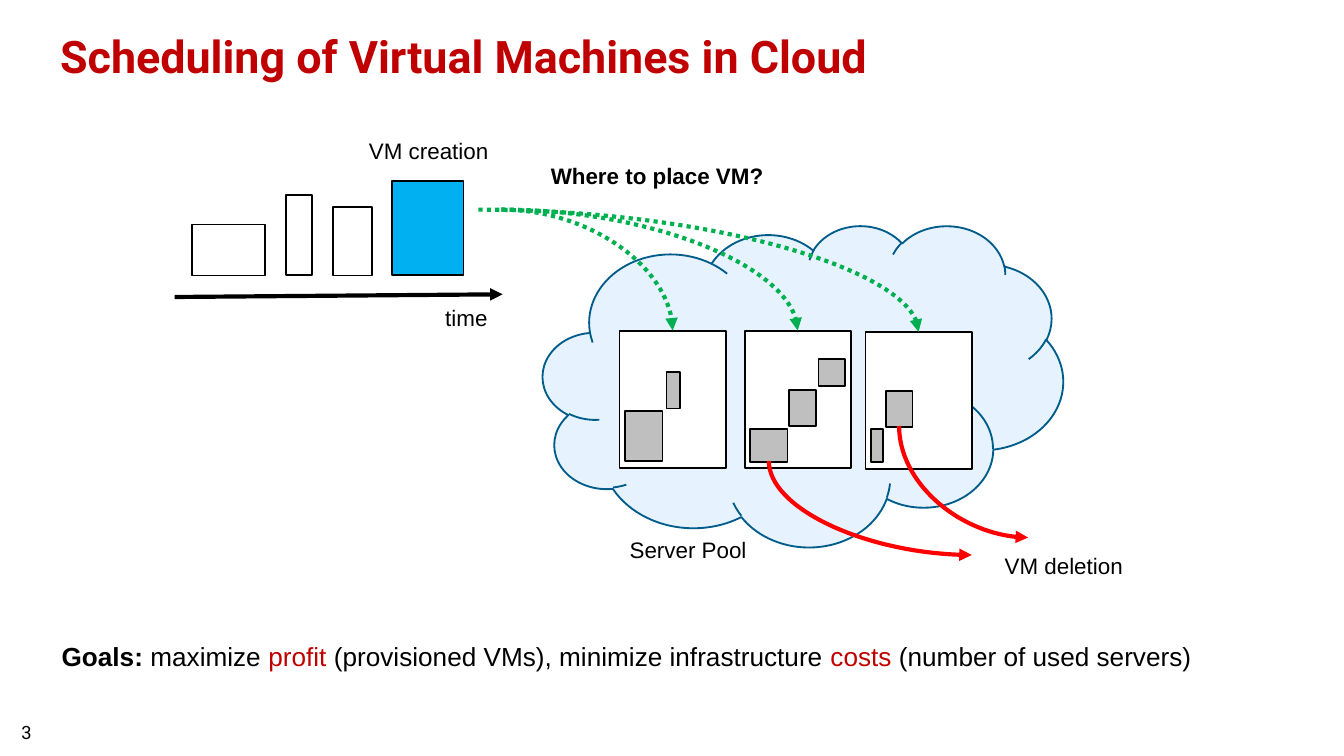
from lxml import etree
from pptx import Presentation, util as u
from pptx.dml.color import RGBColor
from pptx.enum import dml, shapes, text
from pptx.oxml import ns

# Grid: columns and rows of a tenth of an inch
COLS, ROWS = 100, 56.25
BLACK, WHITE, GREY = "000000", "FFFFFF", "BFBFBF"
RED, GREEN, DARK = "FF0000", "00B050", "C00000"


def grid(*cells):
    return [u.Inches(cell / 10) for cell in cells]


def paint(target, color):
    target.solid()
    target.fore_color.rgb = RGBColor.from_string(color)


def block(slide, area, fill, line=BLACK, kind=shapes.MSO_SHAPE.RECTANGLE):
    shape = slide.shapes.add_shape(kind, *grid(*area))
    shape.shadow.inherit = False
    paint(shape.fill, fill)
    paint(shape.line.fill, line)
    shape.line.width = u.Pt(1)


def label(slide, area, parts, size=12, font="Arial", align="LEFT",
          wrap=False, inset=True):
    """Write one line; each part is (words, color, bold)."""
    box = slide.shapes.add_textbox(*grid(*area))
    frame = box.text_frame
    frame.word_wrap = wrap
    frame.vertical_anchor = text.MSO_ANCHOR.MIDDLE
    if not inset:
        frame.margin_left = frame.margin_right = 0
        frame.margin_top = frame.margin_bottom = 0
    para = frame.paragraphs[0]
    para.alignment = getattr(text.PP_ALIGN, align)
    for words, color, bold in parts:
        run = para.add_run()
        run.text = words
        run.font.name, run.font.size = font, u.Pt(size)
        run.font.bold = bold
        paint(run.font.fill, color)


def arrow(slide, start, end, color, kind=shapes.MSO_CONNECTOR.STRAIGHT):
    link = slide.shapes.add_connector(kind, *grid(*start, *end))
    paint(link.line.fill, color)
    link.line.width = u.Pt(2.25)
    props = link._element.spPr
    edge = props.find(ns.qn("a:ln"))
    etree.SubElement(edge, ns.qn("a:tailEnd"), type="triangle")
    etree.SubElement(props, ns.qn("a:effectLst"))
    return link


def curve(slide, start, end, color, drop=False):
    """Quarter bend: leaves sideways, or downwards when drop is set."""
    (x1, y1), (x2, y2) = start, end
    if drop:  # the box before its quarter turn, mirrored
        midx, midy = (x1 + x2) / 2, (y1 + y2) / 2
        halfw, halfh = (y2 - y1) / 2, (x2 - x1) / 2
        start = midx + halfw, midy - halfh
        end = midx - halfw, midy + halfh
    link = arrow(slide, start, end, color, shapes.MSO_CONNECTOR.CURVE)
    props = link._element.spPr
    props.find(ns.qn("a:prstGeom")).set("prst", "curvedConnector2")
    if drop:
        props.find(ns.qn("a:xfrm")).set("rot", "16200000")
    return link


def queue(slide):
    # Requests stand on a common base above the time axis
    base = 20.5
    for left, wide, high, fill in [(14.3, 5.4, 3.8, WHITE),
                                   (21.3, 1.9, 6, WHITE),
                                   (24.8, 2.9, 5.1, WHITE),
                                   (29.2, 5.3, 7, "00B0F0")]:
        block(slide, (left, base - high, wide, high), fill)
    arrow(slide, (13, 22.1), (37.4, 21.9), BLACK)


def pool(slide):
    # Each server holds machines, placed from its own corner
    servers = [
        (46.1, 24.6, [(.4, 6, 2.8, 3.7), (3.5, 3.1, 1, 2.7)]),
        (55.4, 24.6, [(.4, 7.3, 2.8, 2.5), (3.3, 4.4, 2, 2.7),
                      (5.5, 2.1, 2, 2)]),
        (64.4, 24.7, [(.4, 7.2, .9, 2.5), (1.5, 4.4, 2, 2.7)]),
    ]
    for left, top, vms in servers:
        block(slide, (left, top, 7.9, 10.2), WHITE)
        for x, y, wide, high in vms:
            block(slide, (left + x, top + y, wide, high), GREY)
    # Placement choices
    for begin, (left, top, _) in zip((37.3, 37.3, 35.6), servers):
        link = curve(slide, (begin, 15.6), (left + 3.95, top), GREEN)
        link.line.dash_style = dml.MSO_LINE.ROUND_DOT
    # Deletions
    curve(slide, (57.2, 34.3), (72.3, 41.3), RED, True)
    curve(slide, (66.9, 31.7), (76.5, 40), RED, True)


def main():
    deck = Presentation()
    deck.slide_width, deck.slide_height = grid(COLS, ROWS)
    slide = deck.slides.add_slide(deck.slide_layouts[6])

    # Page number and title
    label(slide, (1.6, 53.6, 5.9, 1.7), [("3", BLACK, False)],
          9.8, "Roboto", wrap=True, inset=False)
    label(slide, (3.5, 1.4, 95.3, 5.5),
          [("Scheduling of Virtual Machines in Cloud", DARK, True)],
          24, "Roboto", wrap=True)

    # Diagram
    block(slide, (40.4, 16.75, 38.7, 23.9), "E6F3FE", "005C8A",
          shapes.MSO_SHAPE.CLOUD)
    queue(slide)
    pool(slide)
    for left, top, wide, words, bold in [
            (26.4, 9.7, 11, "VM creation", False),
            (45.8, 39.4, 10.8, "Server Pool", False),
            (73.7, 40.6, 10.9, "VM deletion", False),
            (39.9, 11.6, 18, "Where to place VM?", True),
            (32.1, 22.1, 5.2, "time", False)]:
        label(slide, (left, top, wide, 3), [(words, BLACK, bold)],
              align="CENTER")

    # Goals
    label(slide, (3.6, 47.1, 86.7, 3.4),
          [("Goals:", BLACK, True), (" maximize ", BLACK, False),
           ("profit", DARK, False),
           (" (provisioned VMs), minimize infrastructure ", BLACK, False),
           ("costs", DARK, False),
           (" (number of used servers)", BLACK, False)], 14, wrap=True)

    deck.save("out.pptx")


if __name__ == "__main__":
    main()
